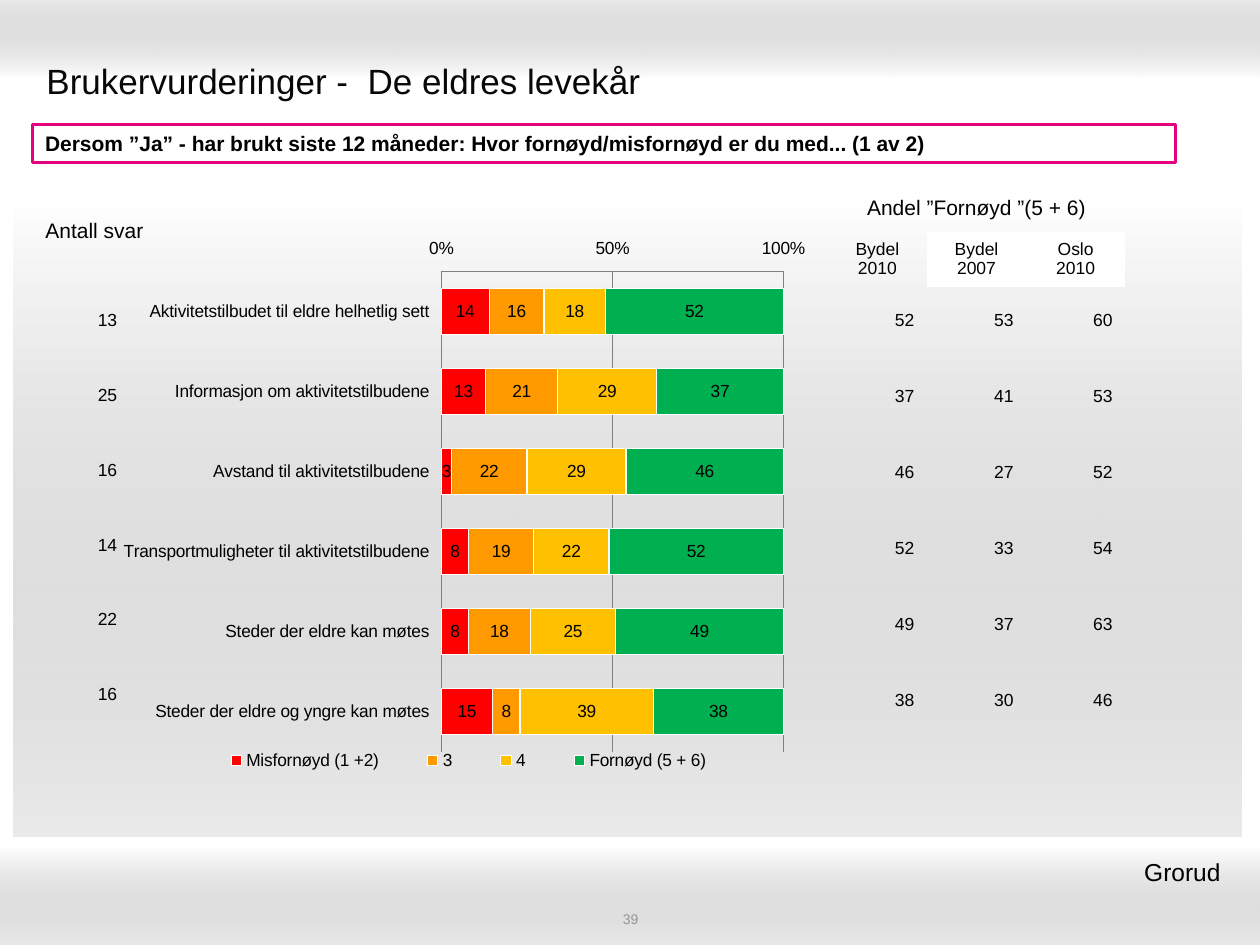
from dataclasses import dataclass

from lxml.etree import SubElement
from pptx import Presentation
from pptx.chart.data import CategoryChartData
from pptx.dml.color import RGBColor
from pptx.enum.chart import XL_CHART_TYPE as CT, XL_LEGEND_POSITION as LP
from pptx.enum.chart import XL_TICK_LABEL_POSITION as TL, XL_TICK_MARK as TM
from pptx.enum.shapes import MSO_SHAPE as SHAPE
from pptx.enum.text import MSO_ANCHOR as ANCHOR, PP_ALIGN as ALIGN
from pptx.oxml import parse_xml
from pptx.oxml.ns import nsdecls, qn
from pptx.util import Inches, Pt


@dataclass(frozen=True)
class Theme:
    font: str = "Arial"
    title: int = 20
    place: int = 14
    lead: int = 12
    body: int = 10
    small: int = 8
    ink: str = "000000"
    heading: str = "080808"
    muted: str = "969696"
    white: str = "FFFFFF"
    shade: str = "999999"
    accent: str = "E7007E"
    grid: str = "808080"
    series: tuple = ("FF0000", "FF9900", "FFC000", "00B050")
    no_style: str = "{2D5ABB26-0587-4C30-8999-92F81FD0307C}"


def rgb(value):
    return RGBColor.from_string(value)


def apply(obj, **values):
    for name, value in values.items():
        setattr(obj, name, value)


class Deck:
    COLS, ROWS, WIDTH, HEIGHT = 100, 75, 10, 7.5

    def __init__(self, theme):
        self.theme = theme
        self.prs = Presentation()
        apply(self.prs, slide_width=Inches(self.WIDTH), slide_height=Inches(self.HEIGHT))
        self.s = self.prs.slides.add_slide(self.prs.slide_layouts[6])

    def x(self, cols):
        return Inches(cols * self.WIDTH / self.COLS)

    def y(self, rows):
        return Inches(rows * self.HEIGHT / self.ROWS)

    def place(self, col, row, cols, rows):
        return self.x(col), self.y(row), self.x(cols), self.y(rows)

    def style(self, font, size, color=None, bold=False):
        apply(font, name=self.theme.font, size=Pt(size), bold=bold)
        font.color.rgb = rgb(color or self.theme.ink)

    def put_lines(self, tf, text, size, align=ALIGN.LEFT, **fmt):
        tf.word_wrap = True
        for i, line in enumerate(text.split("\n")):
            p = tf.add_paragraph() if i else tf.paragraphs[0]
            p.alignment = align
            r = p.add_run()
            r.text = line
            self.style(r.font, size, **fmt)

    def text(self, at, text, size, anchor=ANCHOR.MIDDLE, **fmt):
        tf = self.s.shapes.add_textbox(*self.place(*at)).text_frame
        tf.vertical_anchor = anchor
        self.put_lines(tf, text, size, **fmt)

    def rect(self, at):
        sp = self.s.shapes.add_shape(SHAPE.RECTANGLE, *self.place(*at))
        sp.shadow.inherit = False
        return sp

    def band(self, at, angle):
        sp = self.rect(at)
        sp.line.fill.background()
        sp.fill.gradient()
        sp.fill.gradient_angle = angle
        stops = sp.fill.gradient_stops
        for stop, color, pos in zip(stops, (self.theme.white, self.theme.shade), (0, 1)):
            stop.color.rgb = rgb(color)
            stop.position = pos
        faded = list(sp._element.spPr.iter(qn("a:srgbClr")))[-1]
        SubElement(faded, qn("a:alpha")).set("val", "20000")

    def box(self, at, text):
        sp = self.rect(at)
        sp.fill.solid()
        sp.fill.fore_color.rgb = rgb(self.theme.white)
        sp.line.color.rgb = rgb(self.theme.accent)
        sp.line.width = Pt(2)
        sp.text_frame.vertical_anchor = ANCHOR.MIDDLE
        self.put_lines(sp.text_frame, text, self.theme.lead, bold=True)

    def table(self, at, rows, align, sizes=None, heights=None, merge=False, white=()):
        count, width = len(rows), len(rows[0])
        tbl = self.s.shapes.add_table(count, width, *self.place(*at)).table
        apply(tbl, first_row=False, horz_banding=False)
        tbl._tbl.tblPr.find(qn("a:tableStyleId")).text = self.theme.no_style
        if merge:
            tbl.cell(0, 0).merge(tbl.cell(0, width - 1))
        for i, row in enumerate(rows):
            tbl.rows[i].height = self.y(heights[i] if heights else at[3] / count)
            for j, value in enumerate(row):
                cell = tbl.cell(i, j)
                cell.vertical_anchor = ANCHOR.MIDDLE
                if (i, j) in white:
                    cell.fill.solid()
                    cell.fill.fore_color.rgb = rgb(self.theme.white)
                else:
                    cell.fill.background()
                if not cell.is_spanned:
                    size = sizes[i] if sizes else self.theme.body
                    self.put_lines(cell.text_frame, str(value), size, align)

    def layout(self, parent, after, inner=False, **shares):
        target = '<c:layoutTarget val="inner"/>' if inner else ""
        modes = "".join(f'<c:{k}Mode val="edge"/>' for k in "xy")
        sizes = "".join(f'<c:{k} val="{v}"/>' for k, v in shares.items())
        for old in parent.findall(qn("c:layout")):
            parent.remove(old)
        new = parse_xml(f'<c:layout {nsdecls("c")}><c:manualLayout>'
                        f"{target}{modes}{sizes}</c:manualLayout></c:layout>")
        if after is None:
            parent.insert(0, new)
        else:
            after.addnext(new)

    def bars(self, at, cats, series):
        data = CategoryChartData()
        data.categories = cats
        for name, vals in series.items():
            data.add_series(name, vals)
        chart = self.s.shapes.add_chart(CT.BAR_STACKED, *self.place(*at), data).chart
        self.style(chart.font, self.theme.body)
        apply(chart, has_title=False, has_legend=True)
        apply(chart.legend, position=LP.BOTTOM, include_in_layout=False)
        legend = chart.legend._element
        self.layout(legend, legend.find(qn("c:legendPos")), x=0.08, y=0.91, w=0.82, h=0.05)
        plot = chart.plots[0]
        self.layout(plot._element.getparent(), None, inner=True, x=0.45, y=0.08, w=0.5, h=0.84)

        cat, val = chart.category_axis, chart.value_axis
        apply(cat, reverse_order=True, major_tick_mark=TM.NONE,
              tick_label_position=TL.LOW, has_major_gridlines=False)
        apply(val, minimum_scale=0, maximum_scale=100, major_unit=50,
              major_tick_mark=TM.INSIDE, tick_label_position=TL.LOW,
              has_major_gridlines=True)
        apply(val.tick_labels, number_format="General\\%", number_format_is_linked=False)
        for line in (cat.format.line, val.format.line, val.major_gridlines.format.line):
            line.color.rgb = rgb(self.theme.grid)
            line.width = Pt(0.75)

        apply(plot, gap_width=75, overlap=100, vary_by_categories=False)
        for ser, color in zip(plot.series, self.theme.series):
            ser.format.fill.solid()
            ser.format.fill.fore_color.rgb = rgb(color)
            ser.format.line.color.rgb = rgb(self.theme.white)
            ser.format.line.width = Pt(0.75)
            apply(ser.data_labels, show_value=True, number_format="0",
                  number_format_is_linked=False)
            self.style(ser.data_labels.font, self.theme.body)


def main():
    t = Theme()
    deck = Deck(t)
    cats = ["Aktivitetstilbudet til eldre helhetlig sett", "Informasjon om aktivitetstilbudene",
            "Avstand til aktivitetstilbudene", "Transportmuligheter til aktivitetstilbudene",
            "Steder der eldre kan møtes", "Steder der eldre og yngre kan møtes"]
    satisfied = [52, 37, 46, 52, 49, 38]
    series = {"Misfornøyd (1 +2)": [14, 13, 3, 8, 8, 15], "3": [16, 21, 22, 19, 18, 8],
              "4": [18, 29, 29, 22, 25, 39], "Fornøyd (5 + 6)": satisfied}
    district_2007 = [53, 41, 27, 33, 37, 30]
    oslo_2010 = [60, 53, 52, 54, 63, 46]
    answers = [13, 25, 16, 14, 22, 16]

    deck.band((0, 0, 100, 6.2), 90)
    deck.band((0, 67.2, 100, 7.8), 270)
    deck.band((1.1, 15.6, 97.4, 50.8), 270)
    deck.text((2.7, 3.6, 94.5, 5.5), "Brukervurderinger -  De eldres levekår",
              t.title, color=t.heading)
    deck.text((34.2, 72.2, 31.7, 1.4), "39", t.small, align=ALIGN.CENTER, color=t.muted)
    deck.box((2.6, 9.9, 90.7, 3),
             "Dersom ”Ja” - har brukt siste 12 måneder: Hvor fornøyd/misfornøyd er du med... (1 av 2)")
    deck.bars((9.8, 17.9, 55.1, 45.4), cats, series)
    deck.table((65.7, 22.4, 23.6, 36.2), list(zip(satisfied, district_2007, oslo_2010)),
               ALIGN.RIGHT)
    deck.table((65.7, 14.7, 23.6, 8), [["Andel ”Fornøyd ”(5 + 6)", "", ""],
                                       ["Bydel\n2010", "Bydel\n2007", "Oslo\n2010"]],
               ALIGN.CENTER, sizes=(t.lead, t.body), heights=(3.7, 4.3),
               merge=True, white=((1, 1), (1, 2)))
    deck.table((5.1, 22.5, 5.2, 35.6), [[n] for n in answers], ALIGN.RIGHT)
    deck.table((0.4, 15.4, 14.2, 5.9), [["Antall svar"]], ALIGN.CENTER, sizes=(t.lead,))
    deck.text((61, 67.5, 37.4, 3.4), "Grorud ", t.place, anchor=ANCHOR.TOP, align=ALIGN.RIGHT)
    deck.prs.save("out.pptx")


if __name__ == "__main__":
    main()
